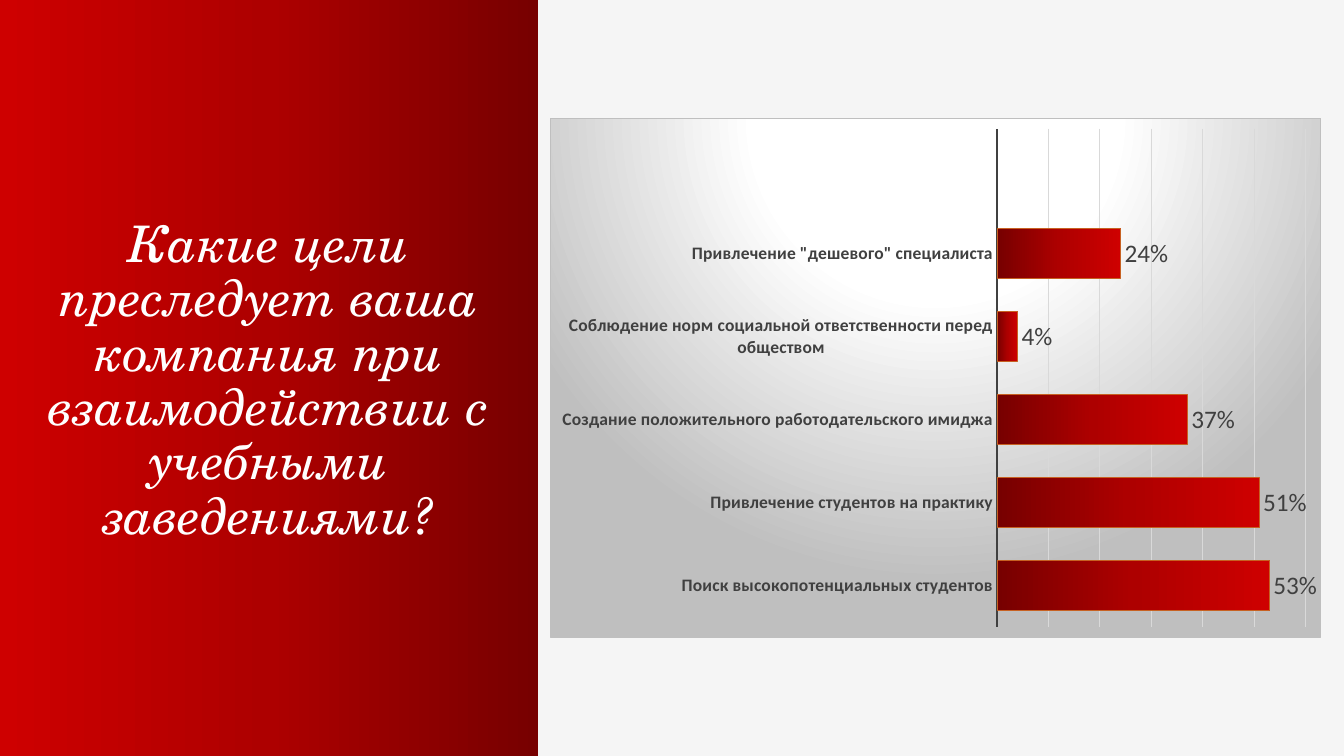
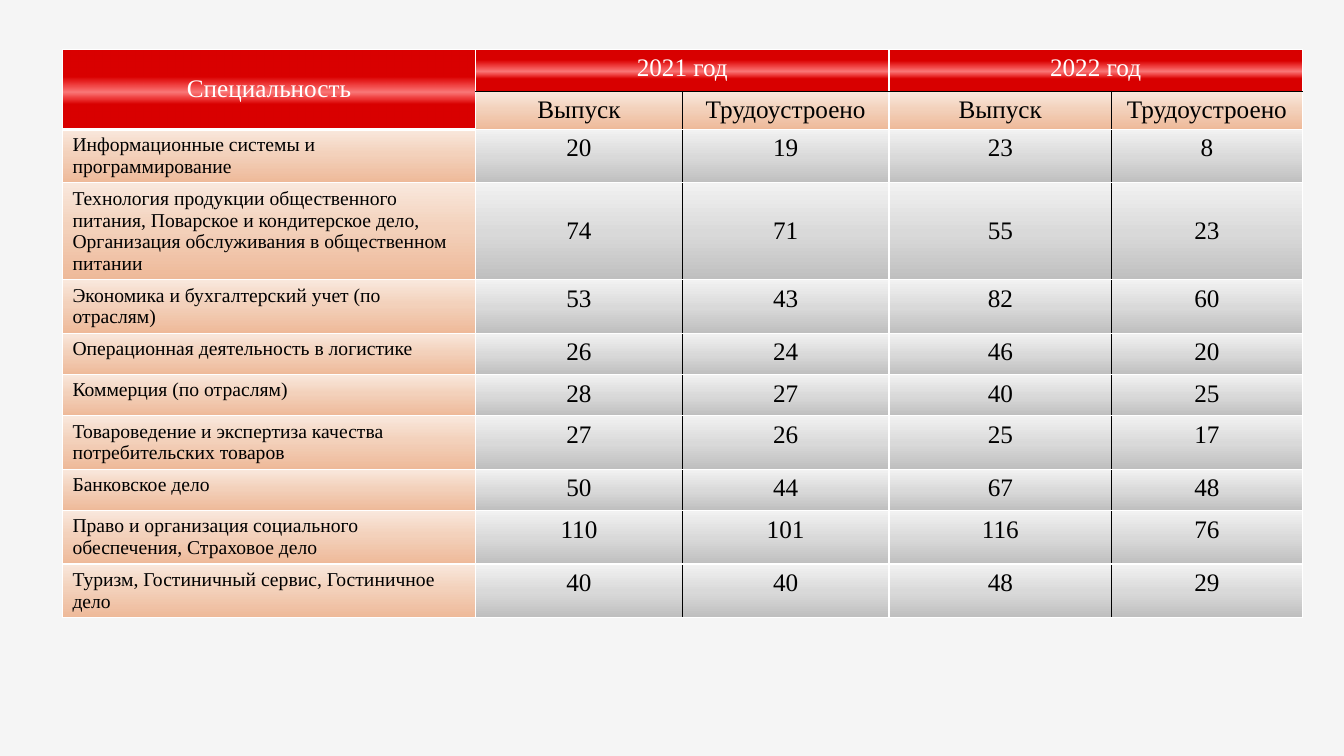
from pptx import Presentation
from pptx.chart import data as cd
from pptx.dml.color import RGBColor
from pptx.enum import chart as ch, shapes as sh, text as tx
from pptx.oxml import parse_xml
from pptx.oxml.ns import qn
from pptx.util import Pt

# Shared colours
PAPER = RGBColor(0xF5, 0xF5, 0xF5)
WHITE = RGBColor(0xFF, 0xFF, 0xFF)
BLACK = RGBColor(0, 0, 0)
INK = RGBColor(0x40, 0x40, 0x40)
GRID = RGBColor(0xD9, 0xD9, 0xD9)
EDGE = RGBColor(0xC7, 0x61, 0x22)
SILVER = RGBColor(0xBF, 0xBF, 0xBF)
CRIMSON = RGBColor(0xCE, 0, 0)
BLOOD = RGBColor(0xAD, 0, 0)
MAROON = RGBColor(0x77, 0, 0)
SCARLET = RGBColor(0xD9, 0, 0)
RED = RGBColor(0xFF, 0, 0)
PEACH = [RGBColor.from_string(c) for c in ("F9E8DD", "F3D1BB", "EEB999")]
PEARL = RGBColor(0xF2, 0xF2, 0xF2)

# Gradients: (position %, colour, opacity %)
BAND = [(0, CRIMSON, 100), (50, BLOOD, 100), (100, MAROON, 100)]
BAR = [(0, MAROON, 100), (50, BLOOD, 100), (100, CRIMSON, 100)]
HALO = [(0, WHITE, 100), (39, WHITE, 100), (100, SILVER, 100)]
WARM = [(p, c, 100) for p, c in zip((0, 46, 100), PEACH)]
COOL = [(0, PEARL, 100), (52, GRID, 100), (100, SILVER, 100)]

# Text formats
TITLE = {"name": "TeX Gyre Schola", "size": Pt(36), "italic": True, "bold": False}
HEAD = {"name": "Times New Roman", "size": Pt(18)}
LABEL = {"name": "Times New Roman", "size": Pt(14)}
BASE = {"name": "Calibri", "size": Pt(10)}
CATS = {"name": "Calibri", "size": Pt(12.5), "bold": True}
VALS = {"name": "Calibri", "size": Pt(18), "bold": False}

NS = ('xmlns:a="http://schemas.openxmlformats.org/drawingml/2006/main" '
      'xmlns:c="http://schemas.openxmlformats.org/drawingml/2006/chart"')
ROUND = ('<a:path path="circle"><a:fillToRect l="50000" t="-80000" '
         'r="50000" b="180000"/></a:path>')

GOALS = [
    ("Поиск высокопотенциальных студентов", 0.53),
    ("Привлечение студентов на практику", 0.51),
    ("Создание положительного работодательского имиджа", 0.37),
    ("Соблюдение норм социальной ответственности перед обществом", 0.04),
    ('Привлечение "дешевого" специалиста', 0.24),
    ("", None),
]
YEARS = ("2021 год", "2022 год")
HEADS = ("Выпуск", "Трудоустроено") * 2
# Name, lines of text in the first column, figures
JOBS = [
    ("Информационные системы и программирование", 2, (20, 19, 23, 8)),
    ("Технология продукции общественного питания, Поварское и кондитерское "
     "дело, Организация обслуживания в общественном питании", 4, (74, 71, 55, 23)),
    ("Экономика и бухгалтерский учет (по отраслям)", 2, (53, 43, 82, 60)),
    ("Операционная деятельность в логистике", 1, (26, 24, 46, 20)),
    ("Коммерция (по отраслям)", 1, (28, 27, 40, 25)),
    ("Товароведение и экспертиза качества потребительских товаров", 2,
     (27, 26, 25, 17)),
    ("Банковское дело", 1, (50, 44, 67, 48)),
    ("Право и организация социального обеспечения, Страховое дело", 2,
     (110, 101, 116, 76)),
    ("Туризм, Гостиничный сервис, Гостиничное дело", 2, (40, 40, 48, 29)),
]


def style(font, fmt, ink):
    for key, val in fmt.items():
        setattr(font, key, val)
    font.color.rgb = ink


def stroke(line, ink, width):
    line.color.rgb = ink
    line.width = Pt(width)


def blend(stops, angle=0, shade=None):
    """Gradient fill as XML text."""
    marks = "".join(
        f'<a:gs pos="{p * 1000}"><a:srgbClr val="{c}">'
        f'<a:alpha val="{o * 1000}"/></a:srgbClr></a:gs>' for p, c, o in stops)
    shade = shade or f'<a:lin ang="{angle * 60000}" scaled="0"/>'
    return (f'<a:gradFill {NS} rotWithShape="1"><a:gsLst>{marks}</a:gsLst>'
            f'{shade}</a:gradFill>')


def paint(fill, host, stops, angle=0):
    fill.gradient()
    old = next(host.iter(qn("a:gradFill")))
    old.getparent().replace(old, parse_xml(blend(stops, angle)))


def write(frame, words, fmt, ink, align):
    par = frame.paragraphs[0]
    par.alignment = align
    run = par.add_run()
    run.text = words
    style(run.font, fmt, ink)
    return par


# Slide 1 parts
def add_band(slide):
    band = slide.shapes.add_shape(
        sh.MSO_SHAPE.RECTANGLE, 0, 0, Pt(384.5), Pt(540))
    band.shadow.inherit = False
    band.line.fill.background()
    paint(band.fill, band._element.spPr, BAND)
    slide.shapes._spTree.insert(2, band._element)


def add_title(slide, words):
    title = slide.shapes.title
    box = {"left": 8.6, "top": 147.6, "width": 367.2, "height": 245.5}
    for key, val in box.items():
        setattr(title, key, Pt(val))
    frame = title.text_frame
    frame.auto_size = tx.MSO_AUTO_SIZE.NONE
    frame.vertical_anchor = tx.MSO_ANCHOR.BOTTOM
    par = write(frame, words, TITLE, WHITE, tx.PP_ALIGN.CENTER)
    par.line_spacing = 0.9


def add_bars(slide):
    data = cd.CategoryChartData(number_format="0%")
    data.categories = [name for name, _ in GOALS]
    data.add_series("Series 1", [val for _, val in GOALS])
    chart = slide.shapes.add_chart(
        ch.XL_CHART_TYPE.BAR_CLUSTERED,
        Pt(392.7), Pt(84.2), Pt(551.2), Pt(371.5), data).chart
    chart.has_legend = chart.has_title = False
    style(chart.font, BASE, BLACK)

    # Axes
    cats, vals = chart.category_axis, chart.value_axis
    cats.major_tick_mark = ch.XL_TICK_MARK.NONE
    style(cats.tick_labels.font, CATS, INK)
    stroke(cats.format.line, INK, 1.5)
    scale = {"minimum_scale": 0, "maximum_scale": 0.6, "major_unit": 0.1,
             "visible": False, "has_major_gridlines": True}
    for key, val in scale.items():
        setattr(vals, key, val)
    stroke(vals.major_gridlines.format.line, GRID, 0.75)

    # Bars and labels
    plot = chart.plots[0]
    plot.gap_width = 65
    plot.vary_by_categories = False
    bars = plot.series[0]
    paint(bars.format.fill, bars._element, BAR)
    stroke(bars.format.line, EDGE, 0.75)
    tags = bars.data_labels
    look = {"show_value": True, "number_format": "0%",
            "number_format_is_linked": False,
            "position": ch.XL_LABEL_POSITION.OUTSIDE_END}
    for key, val in look.items():
        setattr(tags, key, val)
    style(tags.font, VALS, INK)

    # Background and plot area
    root = chart._chartSpace
    root.find(qn("c:chart")).addnext(parse_xml(
        f'<c:spPr {NS}>{blend(HALO, shade=ROUND)}<a:ln w="9525"><a:solidFill>'
        f'<a:srgbClr val="{SILVER}"/></a:solidFill></a:ln></c:spPr>'))
    area = next(root.iter(qn("c:plotArea")))
    for old in area.findall(qn("c:layout")):
        area.remove(old)
    sides = "".join(f'<c:{k} val="{v}"/>' for k, v in (
        ("layoutTarget", "inner"), ("xMode", "edge"), ("yMode", "edge"),
        ("x", 0.58), ("y", 0.02), ("w", 0.4), ("h", 0.96)))
    area.insert(0, parse_xml(
        f'<c:layout {NS}><c:manualLayout>{sides}</c:manualLayout></c:layout>'))


# Slide 2 parts
def frame_cell(cell, row, col):
    """Black rules split each year in two and underline it; the rest are white."""
    low = row > 0
    dark = {"L": low and col in (2, 4), "R": low and col in (1, 3),
            "T": row == 1 and col > 0, "B": row == 0 and col > 0}
    props = cell._tc.get_or_add_tcPr()
    for side, on in dark.items():
        width = 3 if (row, col, side) == (0, 0, "B") else 1
        props.append(parse_xml(
            f'<a:ln{side} {NS} w="{Pt(width)}"><a:solidFill><a:srgbClr '
            f'val="{BLACK if on else WHITE}"/></a:solidFill></a:ln{side}>'))


def fill_cell(cell, words, fmt, ink, stops, left=False, mid=False):
    paint(cell.fill, cell._tc.tcPr, stops, 90)
    align = tx.PP_ALIGN.LEFT if left else tx.PP_ALIGN.CENTER
    write(cell.text_frame, words, fmt, ink, align)
    cell.vertical_anchor = tx.MSO_ANCHOR.MIDDLE if mid else tx.MSO_ANCHOR.TOP


def gloss(start, peak, end):
    return [(start, SCARLET, 100), (peak, RED, 51), (end, SCARLET, 100)]


def add_grid(slide):
    wide = (295.2, 147.6, 147.6, 159.1, 136.1)
    tall = [30, 27] + [max(29.5, 7.2 + 15.5 * n) for _, n, _ in JOBS]
    grid = slide.shapes.add_table(
        len(tall), len(wide), Pt(44.6), Pt(35.3),
        Pt(sum(wide)), Pt(sum(tall))).table
    grid.first_row = grid.horz_banding = False
    for col, size in zip(grid.columns, wide):
        col.width = Pt(size)
    for row, size in zip(grid.rows, tall):
        row.height = Pt(size)
    for r in range(len(tall)):
        for c in range(len(wide)):
            frame_cell(grid.cell(r, c), r, c)

    # Headings
    grid.cell(0, 0).merge(grid.cell(1, 0))
    fill_cell(grid.cell(0, 0), "Специальность", HEAD, WHITE,
              gloss(34, 53, 68), mid=True)
    for c, year, start in zip((1, 3), YEARS, (25, 27)):
        grid.cell(0, c).merge(grid.cell(0, c + 1))
        fill_cell(grid.cell(0, c), year, HEAD, WHITE, gloss(start, 52, 69))
    for c, name in enumerate(HEADS, 1):
        fill_cell(grid.cell(1, c), name, HEAD, BLACK, WARM)

    # Figures
    for r, (name, lines, nums) in enumerate(JOBS, 2):
        fill_cell(grid.cell(r, 0), name, LABEL, BLACK, WARM, left=True)
        for c, num in enumerate(nums, 1):
            fill_cell(grid.cell(r, c), str(num), HEAD, BLACK, COOL,
                      mid=lines > 2)


def main():
    prs = Presentation()
    prs.slide_width, prs.slide_height = Pt(960), Pt(540)
    back = prs.slide_master.background.fill
    back.solid()
    back.fore_color.rgb = PAPER

    goals = prs.slides.add_slide(prs.slide_layouts[5])
    add_band(goals)
    add_title(goals, "Какие цели преследует ваша компания при "
                     "взаимодействии с учебными заведениями?")
    add_bars(goals)

    add_grid(prs.slides.add_slide(prs.slide_layouts[6]))
    prs.save("out.pptx")


if __name__ == "__main__":
    main()
